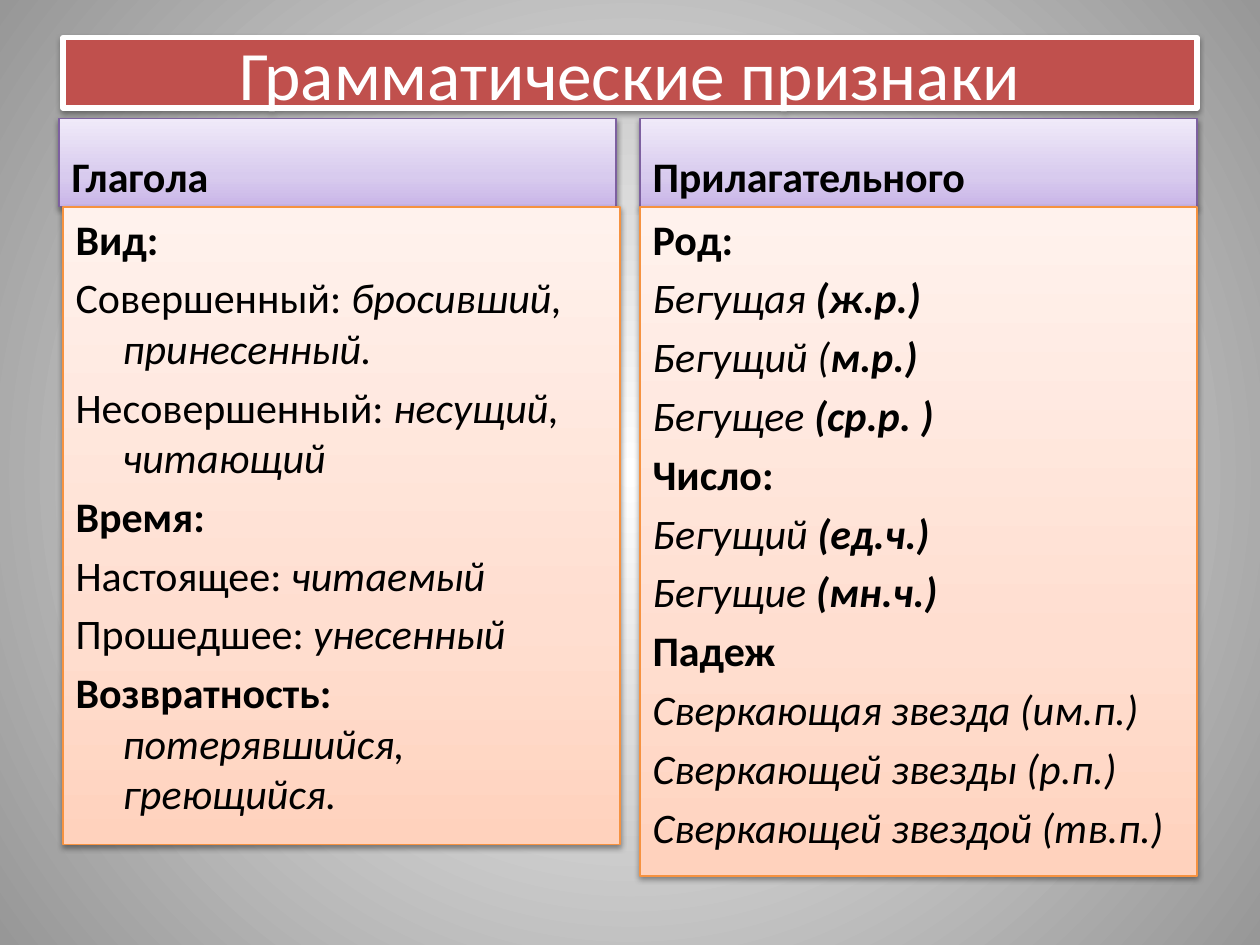
from dataclasses import dataclass

from lxml.etree import SubElement
from pptx import Presentation
from pptx.dml.color import RGBColor
from pptx.enum.text import MSO_ANCHOR, MSO_AUTO_SIZE, PP_ALIGN
from pptx.oxml import parse_xml
from pptx.oxml.ns import nsdecls, qn
from pptx.util import Cm, Pt

COLORS = {
    "title": "C0504D", "white": "FFFFFF", "black": "000000", "grey": "979797",
    "purple_line": "7D60A0", "orange_line": "F69240",
}
PURPLE = [(0, "C9B5E8"), (35, "D8CBEE"), (100, "F0EAF9")]
ORANGE = [(0, "FFD2BD"), (35, "FFDED0"), (100, "FFF2ED")]
UPWARD = '<a:lin ang="16200000" scaled="1"/>'
FROM_CENTRE = ('<a:path path="circle"><a:fillToRect l="50000" t="50000" '
               'r="50000" b="50000"/></a:path>')
FONT = "Calibri"
HANGING = Cm(0.95)
COLUMN_WIDTH, HEADER_TOP, HEADER_HEIGHT = 11.23, 2.39, 1.78


@dataclass
class Column:
    heading: str
    header_left: float
    list_left: float
    list_height: float
    lines: list  # each line is a list of (text, style); style holds "b" and/or "i"


COLUMNS = [
    Column("Глагола", 1.19, 1.27, 12.85, [
        [("Вид:", "b")],
        [("Совершенный: ", ""), ("бросивший, принесенный.", "i")],
        [("Несовершенный: ", ""), ("несущий, читающий", "i")],
        [("Время:", "b")],
        [("Настоящее: ", ""), ("читаемый", "i")],
        [("Прошедшее: ", ""), ("унесенный", "i")],
        [("Возвратность: ", "b"), ("потерявшийся, греющийся.", "i")],
    ]),
    Column("Прилагательного", 12.9, 12.9, 13.49, [
        [("Род:", "b")],
        [("Бегущая", "i"), (" (ж.р.)", "bi")],
        [("Бегущий (", "i"), ("м.р.)", "bi")],
        [("Бегущее ", "i"), ("(ср.р. )", "bi")],
        [("Число:", "b")],
        [("Бегущий ", "i"), ("(ед.ч.)", "bi")],
        [("Бегущие ", "i"), ("(мн.ч.)", "bi")],
        [("Падеж", "b")],
        [("Сверкающая звезда (им.п.)", "i")],
        [("Сверкающей звезды (р.п.)", "i")],
        [("Сверкающей звездой (тв.п.)", "i")],
    ]),
]


def set_gradient(parent, stops: list, direction: str) -> None:
    """Replace the solid fill inside parent with a gradient."""
    marks = "".join(f'<a:gs pos="{position * 1000}"><a:srgbClr val="{color}"/></a:gs>'
                    for position, color in stops)
    gradient = parse_xml(f'<a:gradFill {nsdecls("a")} rotWithShape="1">'
                         f'<a:gsLst>{marks}</a:gsLst>{direction}</a:gradFill>')
    parent.replace(parent.find(qn("a:solidFill")), gradient)


def add_shadow(shape) -> None:
    shape.shadow.inherit = False
    effects = shape.element.spPr.find(qn("a:effectLst"))
    shadow = SubElement(effects, qn("a:outerShdw"), blurRad=str(Pt(3.1)),
                        dist=str(Pt(1.6)), dir="5400000", rotWithShape="0")
    color = SubElement(shadow, qn("a:srgbClr"), val=COLORS["black"])
    SubElement(color, qn("a:alpha"), val="38000")


def style_box(shape, left: float, top: float, width: float, height: float,
              fill: str, line: str, line_width: float, anchor: MSO_ANCHOR) -> None:
    shape.left, shape.top = Cm(left), Cm(top)
    shape.width, shape.height = Cm(width), Cm(height)
    shape.fill.solid()
    shape.fill.fore_color.rgb = RGBColor.from_string(fill)
    shape.line.color.rgb = RGBColor.from_string(line)
    shape.line.width = Pt(line_width)
    add_shadow(shape)
    frame = shape.text_frame
    frame.word_wrap = True
    frame.auto_size = MSO_AUTO_SIZE.NONE
    frame.vertical_anchor = anchor


def format_run(run, size: float, color: str, style: str = "") -> None:
    run.font.name = FONT
    run.font.size = Pt(size)
    run.font.color.rgb = RGBColor.from_string(color)
    run.font.bold = "b" in style
    run.font.italic = "i" in style


def fill_list(shape, lines: list) -> None:
    frame = shape.text_frame
    for index, line in enumerate(lines):
        paragraph = frame.paragraphs[0] if index == 0 else frame.add_paragraph()
        properties = paragraph._p.get_or_add_pPr()
        properties.set("marL", str(HANGING))
        properties.set("indent", str(-HANGING))
        SubElement(properties, qn("a:buNone"))
        if index == 0:
            paragraph.space_before = Pt(0)
        for text, style in line:
            run = paragraph.add_run()
            run.text = text
            format_run(run, 24, COLORS["black"], style)


def draw_column(header, body, column: Column) -> None:
    style_box(header, column.header_left, HEADER_TOP, COLUMN_WIDTH, HEADER_HEIGHT,
              PURPLE[0][1], COLORS["purple_line"], 0.75, MSO_ANCHOR.BOTTOM)
    set_gradient(header.element.spPr, PURPLE, UPWARD)
    header.text_frame.text = column.heading
    paragraph = header.text_frame.paragraphs[0]
    paragraph.space_before = Pt(0)
    format_run(paragraph.runs[0], 24, COLORS["black"], "b")

    style_box(body, column.list_left, HEADER_TOP + HEADER_HEIGHT, COLUMN_WIDTH,
              column.list_height, ORANGE[0][1], COLORS["orange_line"], 0.75,
              MSO_ANCHOR.TOP)
    set_gradient(body.element.spPr, ORANGE, UPWARD)
    fill_list(body, column.lines)


def main() -> None:
    presentation = Presentation()
    presentation.slide_width, presentation.slide_height = Cm(25.4), Cm(19.05)
    comparison_layout = presentation.slide_layouts[4]
    slide = presentation.slides.add_slide(comparison_layout)

    # Background
    slide.background.fill.solid()
    set_gradient(slide.element.find(".//" + qn("p:bgPr")),
                 [(0, COLORS["white"]), (100, COLORS["grey"])], FROM_CENTRE)

    # Title
    title = slide.shapes.title
    style_box(title, 1.27, 0.76, 22.86, 1.42, COLORS["title"], COLORS["white"], 3,
              MSO_ANCHOR.MIDDLE)
    title.text_frame.text = "Грамматические признаки"
    paragraph = title.text_frame.paragraphs[0]
    paragraph.alignment = PP_ALIGN.CENTER
    format_run(paragraph.runs[0], 39.6, COLORS["white"])

    # Two columns, each a heading above a list
    header_and_body = list(slide.placeholders)[1:]
    for index, column in enumerate(COLUMNS):
        draw_column(*header_and_body[2 * index:2 * index + 2], column)

    presentation.save("out.pptx")


if __name__ == "__main__":
    main()
